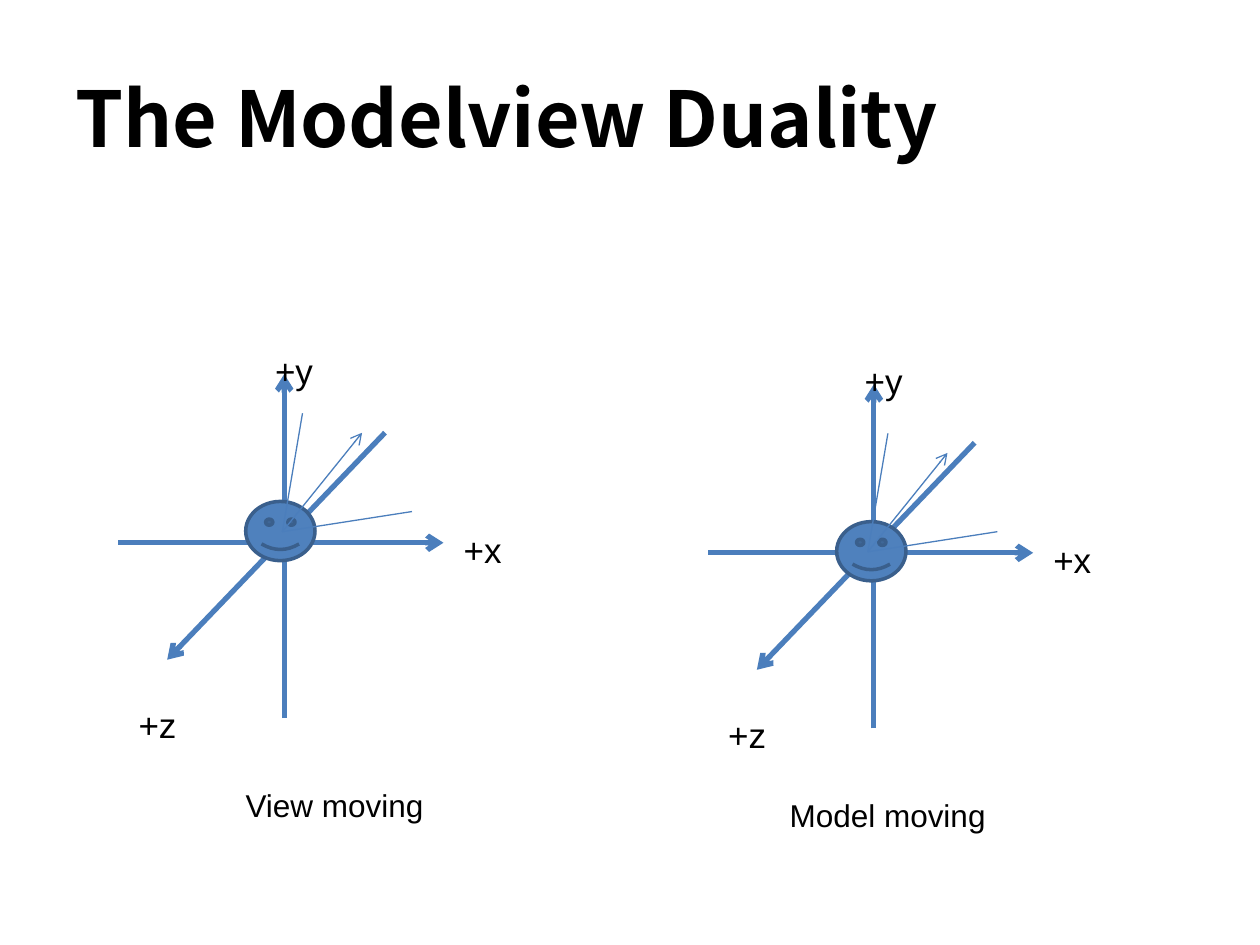
from collections import namedtuple

from lxml import etree
from pptx import Presentation
from pptx import util as u
from pptx.dml.color import RGBColor
from pptx.enum import shapes, text
from pptx.oxml import parse_xml
from pptx.oxml.ns import nsdecls, qn

Box = namedtuple("Box", "left top width height")
COLORS = {"ink": "000000", "axis": "4B7EBC", "face": "4F81BD", "face_edge": "3A5F8C"}
AXES = [((0, 0.49), (1, 0.49)), ((0.51, 1), (0.51, 0)), ((0.82, 0.17), (0.15, 0.83))]
AXIS_LABELS = {"+x": (1, 0.43), "+y": (0.42, -0.09), "+z": (0, 0.94)}
RAYS = [(1.15, -1.67, True), (1.87, -0.34, False), (0.29, -2, False)]


def rgb(name):
    """Return the named colour."""
    return RGBColor.from_string(COLORS[name])


def point(box, across, down):
    """Return the spot at the given shares of a box."""
    return box.left + across * box.width, box.top + down * box.height


def add_text(slide, box, wording, size, font="Arial", align=text.PP_ALIGN.CENTER):
    """Write one line of text in a box and return its paragraph."""
    frame = slide.shapes.add_textbox(*map(u.Inches, box)).text_frame
    frame.word_wrap = True
    paragraph = frame.paragraphs[0]
    paragraph.text = wording
    paragraph.alignment = align
    paragraph.font.name = font
    paragraph.font.size = u.Pt(size)
    paragraph.font.color.rgb = rgb("ink")
    return paragraph


def add_line(slide, start, end, weight, arrow):
    """Draw a straight line, with an arrowhead at its end if asked."""
    line = slide.shapes.add_connector(
        shapes.MSO_CONNECTOR.STRAIGHT, *map(u.Inches, start + end))
    line.line.color.rgb = rgb("axis")
    line.line.width = u.Pt(weight)
    if arrow:
        etree.SubElement(line.line._get_or_add_ln(), qn("a:tailEnd"), type="arrow")
    etree.SubElement(line._element.spPr, qn("a:effectLst"))


def add_title(slide, box, wording):
    """Write the bold slide title with its soft shadow."""
    title = add_text(slide, box, wording, 44, "Noto Sans CJK SC", text.PP_ALIGN.LEFT)
    title.font.bold = True
    run = title.runs[0]
    run.font.size = u.Pt(44)
    run.font.color.rgb = rgb("ink")
    run._r.get_or_add_rPr().append(parse_xml(
        f'<a:effectLst {nsdecls("a")}><a:outerShdw blurRad="38100" dist="38100" dir="2700000">'
        '<a:srgbClr val="000000"><a:alpha val="43000"/></a:srgbClr></a:outerShdw></a:effectLst>'))
    title._p.getparent().getparent().txBody.bodyPr.set("anchor", "ctr")


def add_axes(slide, box):
    """Draw the three axes and their labels."""
    for start, end in AXES:
        add_line(slide, point(box, *start), point(box, *end), 3, True)
    for label, spot in AXIS_LABELS.items():
        add_text(slide, Box(*point(box, *spot), 0.62, 0.44), label, 20)


def add_viewer(slide, box, eye):
    """Draw the face and its view rays, starting at the eye share of its width."""
    face = slide.shapes.add_shape(
        shapes.MSO_SHAPE.SMILEY_FACE, *map(u.Inches, box))
    face.shadow.inherit = False
    face.fill.solid()
    face.fill.fore_color.rgb = rgb("face")
    face.line.color.rgb = rgb("face_edge")
    face.line.width = u.Pt(2)
    for across, down, arrow in RAYS:
        add_line(slide, point(box, eye, 0.51),
                 point(box, eye + across, 0.51 + down), 0.75, arrow)


def main():
    """Build and save the slide."""
    deck = Presentation()
    deck.slide_width, deck.slide_height = u.Inches(10), u.Inches(7.5)
    slide = deck.slides.add_slide(deck.slide_layouts[6])
    add_title(slide, Box(0.5, 0.3, 7.18, 1.25), "The Modelview Duality")
    scenes = [
        ("View moving", Box(0.94, 2.97, 2.58, 2.73), (1.95, 3.98), 0.53, (0.94, 6.19)),
        ("Model moving", Box(5.62, 3.05, 2.58, 2.73), (6.64, 4.14), 0.45, (5.33, 6.27)),
    ]
    for caption, axes, face, eye, caption_spot in scenes:
        add_axes(slide, axes)
        add_viewer(slide, Box(*face, 0.55, 0.47), eye)
        add_text(slide, Box(*caption_spot, 3.43, 0.4), caption, 18)
    deck.save("out.pptx")


if __name__ == "__main__":
    main()
